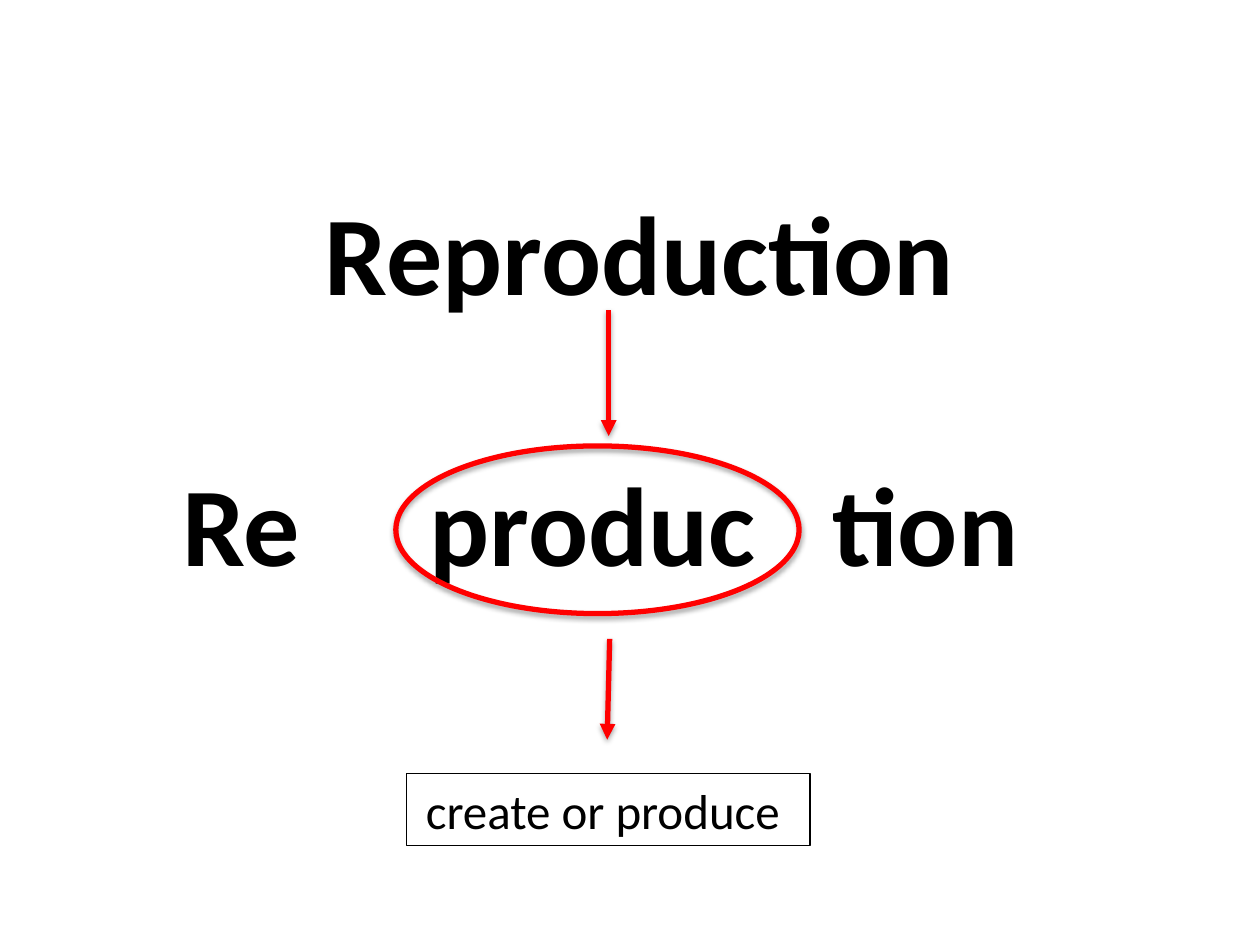
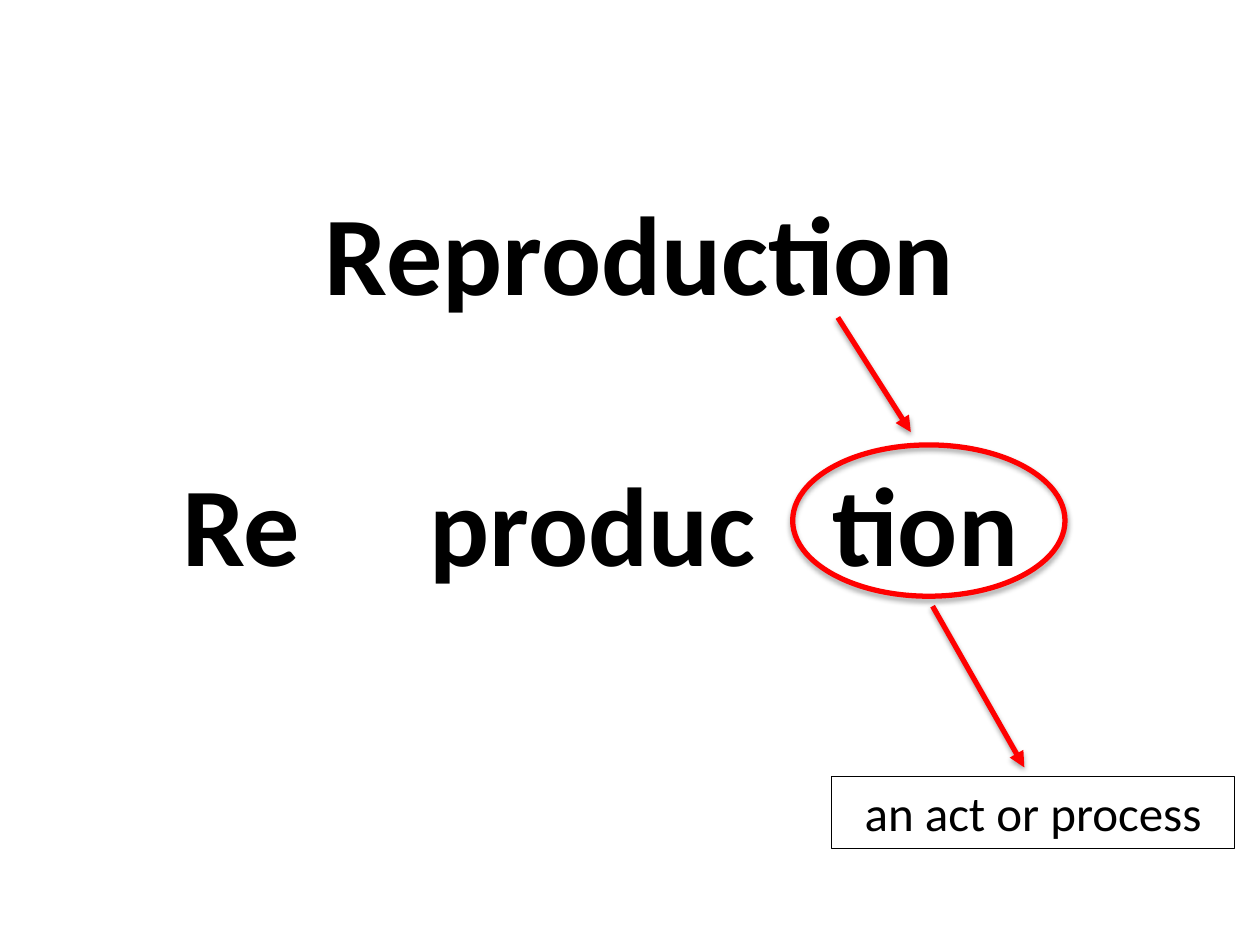
"""Build two slides that split the word Reproduction into its parts."""
from lxml.etree import SubElement as Sub
from pptx import Presentation
from pptx.dml.color import RGBColor as Rgb
from pptx.enum.shapes import MSO_CONNECTOR as Link, MSO_SHAPE as Kind
from pptx.enum.text import MSO_ANCHOR as Anchor, MSO_AUTO_SIZE as Fit, PP_ALIGN as Align
from pptx.oxml.ns import qn
from pptx.util import Cm, Pt

theme = {
    "ink": Rgb(0, 0, 0),
    "mark": Rgb(255, 0, 0),
    "word": {"name": "Calibri", "size": Pt(64), "bold": True},
    "note": {"name": "Calibri", "size": Pt(28), "bold": False},
    "thick": Pt(3),
    "thin": Pt(0.75),
}
frame = {"word_wrap": True, "auto_size": Fit.SHAPE_TO_FIT_TEXT,
         "margin_left": Cm(0.25), "margin_right": Cm(0.25),
         "margin_top": Cm(0.13), "margin_bottom": Cm(0.13)}
place = {"left": Cm(2.03), "top": Cm(3.56), "width": Cm(21.72), "height": Cm(8.46)}
stops = [1.4, 6.38, 14.5]
parts = ["Re", "produc", "tion"]

slides = [
    {"note": "create or produce ", "box": (8.2, 15.6, 8.13, 1.45),
     "oval": (7.98, 8.99, 8.13, 3.38),
     "arrows": [(12.27, 6.25, 12.27, 8.79), (12.29, 12.88, 12.24, 14.91)]},
    {"note": "an act or process", "box": (16.76, 15.65, 8.13, 1.45),
     "oval": (15.98, 8.97, 5.49, 3.05),
     "arrows": [(16.89, 6.4, 18.36, 8.71), (18.8, 12.22, 20.65, 15.47)]},
]


def write(para, text, style):
    """Add a run of text in a theme style."""
    font = para.add_run().font
    para.runs[-1].text = text
    for key, val in theme[style].items():
        setattr(font, key, val)
    font.color.rgb = theme["ink"]


def stroke(item, tint, width, shade=None):
    """Set the line and, for a given (opacity, distance), a soft shadow."""
    item.line.color.rgb = theme[tint]
    item.line.width = theme[width]
    props = item._element.spPr
    glow = props.find(qn("a:effectLst"))
    if glow is None:
        glow = Sub(props, qn("a:effectLst"))
    if shade:
        alpha, dist = shade
        drop = Sub(glow, qn("a:outerShdw"), blurRad=str(Pt(3.1)), dist=str(Pt(dist)),
                   dir="5400000", rotWithShape="0")
        black = Sub(drop, qn("a:srgbClr"), val="000000")
        Sub(black, qn("a:alpha"), val=str(alpha * 1000))


deck = Presentation()
deck.slide_width, deck.slide_height = Cm(25.4), Cm(19.05)

for plan in slides:
    slide = deck.slides.add_slide(deck.slide_layouts[5])
    shapes = slide.shapes

    title = shapes.title
    for key, val in place.items():
        setattr(title, key, val)
    body = title.text_frame
    for key, val in frame.items():
        setattr(body, key, val)
    body.vertical_anchor = Anchor.TOP
    whole, split = body.paragraphs[0], body.add_paragraph()
    whole.alignment = Align.CENTER
    write(whole, "Reproduction", "word")
    split.alignment = Align.LEFT
    split.space_before = Pt(78)
    tabs = Sub(split._p.get_or_add_pPr(), qn("a:tabLst"))
    for stop in stops:
        Sub(tabs, qn("a:tab"), pos=str(Cm(stop)), algn="l")
    write(split, "".join("\t" + part for part in parts), "word")

    for ends in plan["arrows"]:
        arrow = shapes.add_connector(Link.STRAIGHT, *map(Cm, ends))
        stroke(arrow, "mark", "thick", (37, 1.6))
        Sub(arrow.line._get_or_add_ln(), qn("a:tailEnd"), type="triangle")

    box = shapes.add_shape(Kind.RECTANGLE, *map(Cm, plan["box"]))
    oval = shapes.add_shape(Kind.OVAL, *map(Cm, plan["oval"]))
    for item in (box, oval):
        item.shadow.inherit = False
        item.fill.background()
    stroke(box, "ink", "thin")
    stroke(oval, "mark", "thick", (35, 1.8))

    for key, val in frame.items():
        setattr(box.text_frame, key, val)
    box.text_frame.vertical_anchor = Anchor.TOP
    note = box.text_frame.paragraphs[0]
    note.alignment = Align.CENTER
    write(note, plan["note"], "note")

deck.save("out.pptx")
